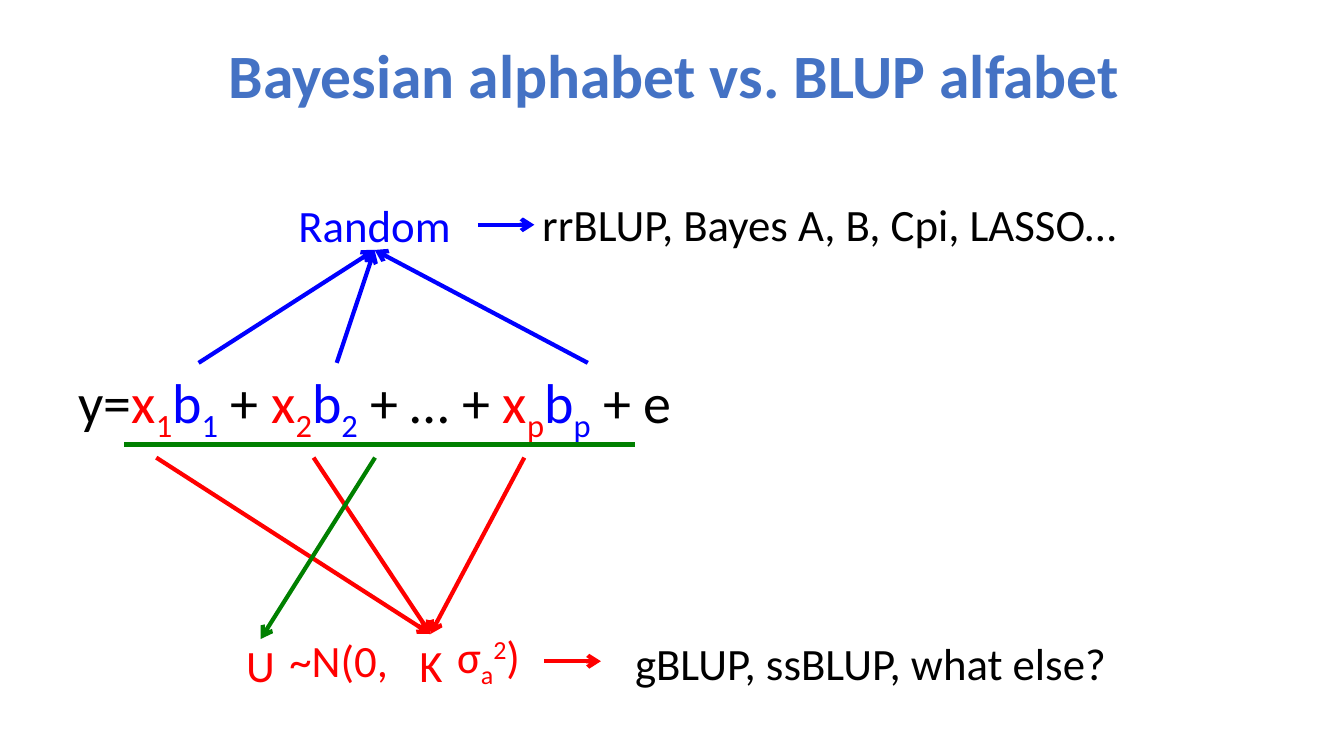
import pptx
import pptx.util
import pptx.dml.color
import pptx.enum.shapes
import pptx.enum.text
import pptx.oxml.ns
import lxml.etree

PX = 9144  # 100 px to the inch
RED, BLUE, GREEN, BLACK = "FF0000", "0000FF", "008000", "000000"
ALIGN = pptx.enum.text.PP_ALIGN
ANCHOR = pptx.enum.text.MSO_ANCHOR


def px(*nums):
    return [pptx.util.Emu(num * PX) for num in nums]


def paint(color, code):
    color.rgb = pptx.dml.color.RGBColor.from_string(code)


def style(run, size, code, base=0):
    """Format a run; base is its raise in percent, below zero for a subscript."""
    font = run.font
    font.name = "Calibri"
    font.size = pptx.util.Pt(size)
    paint(font.color, code)
    if base:
        run._r.get_or_add_rPr().set("baseline", str(base * 1000))


def add_box(slide, spot, parts, size=32, align=ALIGN.CENTER, anchor=ANCHOR.MIDDLE):
    """Add a text box from (text, colour, base) parts."""
    box = slide.shapes.add_textbox(*px(*spot))
    frame = box.text_frame
    frame.word_wrap = True
    frame.vertical_anchor = anchor
    para = frame.paragraphs[0]
    para.alignment = align
    for text, code, base in parts:
        run = para.add_run()
        run.text = text
        style(run, size, code, base)
    return box


def add_line(slide, start, end, code, arrow=True):
    kind = pptx.enum.shapes.MSO_CONNECTOR.STRAIGHT
    line = slide.shapes.add_connector(kind, *px(*start, *end))
    line.line.width = pptx.util.Pt(3)
    paint(line.line.color, code)
    qn = pptx.oxml.ns.qn
    if arrow:
        tail = lxml.etree.SubElement(line.line._get_or_add_ln(), qn("a:tailEnd"))
        tail.set("type", "arrow")
    lxml.etree.SubElement(line._element.spPr, qn("a:effectLst"))
    return line


def set_title(slide, text):
    title = slide.shapes.title
    title.left, title.top, title.width, title.height = px(94, 5, 1150, 145)
    frame = title.text_frame
    frame.text = text
    frame.vertical_anchor = ANCHOR.MIDDLE
    para = frame.paragraphs[0]
    para.alignment = ALIGN.CENTER
    para.line_spacing = 0.9
    style(para.runs[0], 44, "4472C4")
    para.runs[0].font.bold = True


def add_model(slide):
    """Write y as the sum of the terms x b and the error e."""
    parts = [("y=", BLACK, 0)]
    for sub, link in (("1", " + "), ("2", " + … + "), ("p", " + e")):
        parts += [("x", RED, 0), (sub, RED, -25),
                  ("b", BLUE, 0), (sub, BLUE, -25), (link, BLACK, 0)]
    add_box(slide, (68, 360, 740, 77), parts, 40, ALIGN.LEFT, ANCHOR.TOP)
    add_line(slide, (123, 441), (630, 441), GREEN, arrow=False)


def main():
    deck = pptx.Presentation()
    deck.slide_width, deck.slide_height = px(1333, 750)
    slide = deck.slides.add_slide(deck.slide_layouts[5])
    set_title(slide, "Bayesian alphabet vs. BLUP alfabet")
    add_model(slide)

    random = add_box(slide, (214, 198, 315, 50), [("Random", BLUE, 0)])
    add_box(slide, (252, 629, 168, 50), [("~N(0,", RED, 0)])
    effect = add_box(slide, (220, 634, 77, 50), [("U", RED, 0)])
    add_box(slide, (392, 634, 71, 50), [("K", RED, 0)])
    add_box(slide, (427, 629, 115, 50),
            [("σ", RED, 0), ("a", RED, -25), ("2", RED, 30), (")", RED, 0)])
    for spot, text in (((528, 197, 670, 50), "rrBLUP, Bayes A, B, Cpi, LASSO…"),
                       ((620, 632, 578, 50), "gBLUP, ssBLUP, what else?")):
        add_box(slide, spot, [(text, BLACK, 0)], align=ALIGN.LEFT)

    for left in (155, 311, 520):
        add_line(slide, (left, 454), (427, 629), RED)
    for left in (197, 334, 583):
        add_line(slide, (left, 360), (372, 248), BLUE).end_connect(random, 2)
    add_line(slide, (372, 454), (258, 634), GREEN).end_connect(effect, 0)
    for left, top, code in ((474, 223, BLUE), (540, 656, RED)):
        add_line(slide, (left, top), (left + 56, top), code)

    deck.save("out.pptx")


if __name__ == "__main__":
    main()
